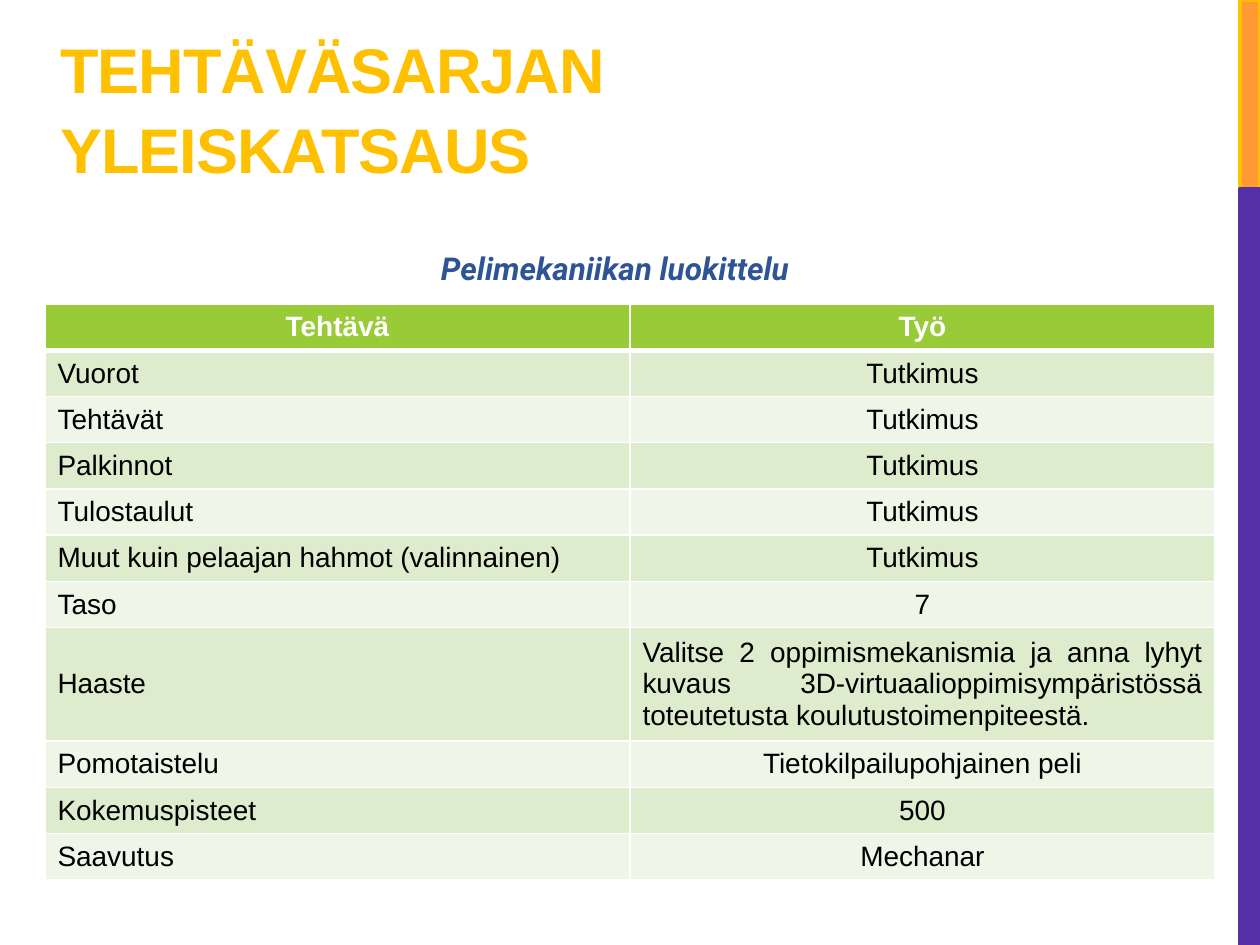
from lxml.etree import SubElement
from pptx import Presentation
from pptx.dml.color import RGBColor
from pptx.enum.shapes import MSO_SHAPE
from pptx.enum.text import MSO_ANCHOR, PP_ALIGN
from pptx.oxml.ns import qn
from pptx.util import Emu, Pt

WHITE = RGBColor(0xFF, 0xFF, 0xFF)
BLACK = RGBColor(0x00, 0x00, 0x00)
ORANGE = RGBColor(0xFF, 0x99, 0x33)
GOLD = RGBColor(0xFF, 0xC0, 0x00)
PURPLE = RGBColor(0x53, 0x30, 0xA5)
BLUE = RGBColor(0x2F, 0x54, 0x96)
GREEN = RGBColor(0x99, 0xCB, 0x38)
BANDS = [RGBColor(0xEF, 0xF6, 0xE8), RGBColor(0xDE, 0xEC, 0xCE)]


def px(*lengths):
    """Turn lengths at 126 px to the inch into EMU."""
    return [Emu(round(length * 914400 / 126)) for length in lengths]


def write(frame, text, color, paragraph_format, **font_format):
    """Fill the first paragraph of a frame with one formatted run."""
    frame.word_wrap = True
    paragraph = frame.paragraphs[0]
    for name, value in paragraph_format.items():
        setattr(paragraph, name, value)
    run = paragraph.add_run()
    run.text = text
    for name, value in font_format.items():
        setattr(run.font, name, value)
    run.font.color.rgb = color
    return run


prs = Presentation()
prs.slide_width, prs.slide_height = px(1260, 945)
slide = prs.slides.add_slide(prs.slide_layouts[6])
shapes = slide.shapes

# Side bars
for top, height, fill, line in [(0, 189, ORANGE, GOLD), (189, 756, PURPLE, PURPLE)]:
    bar = shapes.add_shape(MSO_SHAPE.RECTANGLE, *px(1240, top, 20, height))
    bar.shadow.inherit = False
    bar.fill.solid()
    bar.fill.fore_color.rgb = fill
    bar.line.color.rgb = line
    bar.line.width = Pt(2.25)

# Headings
title = shapes.add_textbox(*px(48, 3, 798, 189)).text_frame
title.vertical_anchor = MSO_ANCHOR.BOTTOM
title_run = write(title, "TEHTÄVÄSARJAN YLEISKATSAUS", GOLD, {"line_spacing": 1.05},
                  name="Arial", size=Pt(36), bold=True)
title_run.font._element.set("spc", "-60")

subtitle = shapes.add_textbox(*px(89, 224, 1052, 64)).text_frame
write(subtitle, "Pelimekaniikan luokittelu", BLUE,
      {"alignment": PP_ALIGN.CENTER, "line_spacing": 1.5, "space_after": Pt(6)},
      name="Roboto", size=Pt(18), bold=True, italic=True)

# Task table
CHALLENGE = "Haaste"
tasks = [
    ("Tehtävä", "Työ"),
    ("Vuorot", "Tutkimus"),
    ("Tehtävät", "Tutkimus"),
    ("Palkinnot", "Tutkimus"),
    ("Tulostaulut", "Tutkimus"),
    ("Muut kuin pelaajan hahmot (valinnainen)", "Tutkimus"),
    ("Taso", "7"),
    (CHALLENGE, "Valitse 2 oppimismekanismia ja anna lyhyt kuvaus "
                "3D-virtuaalioppimisympäristössä toteutetusta koulutustoimenpiteestä."),
    ("Pomotaistelu", "Tietokilpailupohjainen peli"),
    ("Kokemuspisteet", "500"),
    ("Saavutus", "Mechanar"),
]
table_height, challenge_height = px(575, 113)
row_height = Emu((table_height - challenge_height) // (len(tasks) - 1))
table = shapes.add_table(len(tasks), 2, *px(45, 304, 1170, 575)).table

for row, task in enumerate(tasks):
    is_header = row == 0
    is_challenge = task[0] == CHALLENGE
    table.rows[row].height = challenge_height if is_challenge else row_height
    for column, text in enumerate(task):
        cell = table.cell(row, column)
        cell.vertical_anchor = MSO_ANCHOR.MIDDLE
        if column == 0 and not is_header:
            alignment = PP_ALIGN.LEFT
        elif is_challenge:
            alignment = PP_ALIGN.JUSTIFY
        else:
            alignment = PP_ALIGN.CENTER
        write(cell.text_frame, text, WHITE if is_header else BLACK,
              {"alignment": alignment}, name="Arial", size=Pt(16), bold=is_header)

        # Borders come before the fill in the cell properties
        for side in "LRTB":
            under_header = (row, side) in [(0, "B"), (1, "T")]
            border = SubElement(cell._tc.get_or_add_tcPr(), qn(f"a:ln{side}"),
                                w=str(Pt(3 if under_header else 1)))
            border_fill = SubElement(border, qn("a:solidFill"))
            SubElement(border_fill, qn("a:srgbClr"), val=str(WHITE))
        cell.fill.solid()
        cell.fill.fore_color.rgb = GREEN if is_header else BANDS[row % 2]

prs.save("out.pptx")
